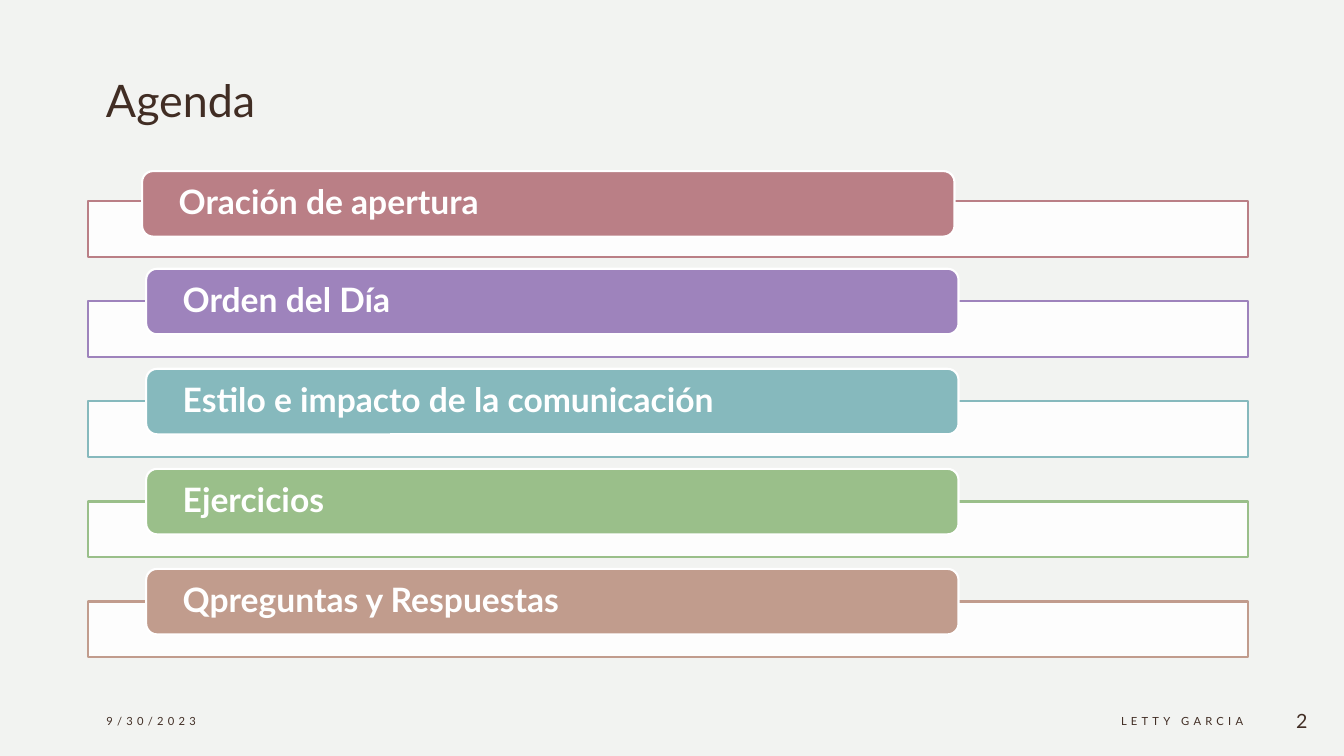
from lxml import etree
from pptx import Presentation
from pptx.dml.color import RGBColor
from pptx.enum import shapes, text
from pptx.oxml import ns
from pptx.util import Pt

WIDTH, HEIGHT = 960, 540
FONT = "Lato"
COLORS = {
    "sage": "A9B5A2", "white": "FFFFFF", "brown": "412D24",
    "rose": "BA7F86", "purple": "9E83BC", "teal": "86B9BD",
    "green": "9ABF8A", "tan": "C19C8D",
}
AGENDA = [
    ("Oración de apertura", "rose"),
    ("Orden del Día", "purple"),
    ("Estilo e impacto de la comunicación", "teal"),
    ("Ejercicios", "green"),
    ("Qpreguntas y Respuestas", "tan"),
]
ROW_PITCH = 71.46
BAND_HEIGHT = 39.6
TAB_WIDTH, TAB_HEIGHT = 580.3, 46.8


def rgb(name):
    return RGBColor.from_string(COLORS[name])


def add_box(slide, kind, box, fill, line=None, opacity=100):
    """Add a preset shape; opacity is the fill's percentage."""
    shape = slide.shapes.add_shape(kind, *map(Pt, box))
    shape.shadow.inherit = False
    shape.fill.solid()
    shape.fill.fore_color.rgb = rgb(fill)
    if opacity < 100:
        color = shape._element.spPr.find(".//" + ns.qn("a:srgbClr"))
        etree.SubElement(color, ns.qn("a:alpha"), val=str(opacity * 1000))
    if line:
        shape.line.color.rgb = rgb(line)
        shape.line.width = Pt(1.5)
    else:
        shape.line.fill.background()
    return shape


def write(shape, words, size, color="brown", bold=False, spacing=0,
          align=text.PP_ALIGN.LEFT):
    """Write one vertically centred line; spacing is in points."""
    frame = shape.text_frame
    frame.word_wrap = True
    frame.vertical_anchor = text.MSO_ANCHOR.MIDDLE
    paragraph = frame.paragraphs[0]
    paragraph.alignment = align
    run = paragraph.add_run()
    run.text = words
    run.font.name = FONT
    run.font.size = Pt(size)
    run.font.bold = bold
    run.font.color.rgb = rgb(color)
    if spacing:
        run.font._element.set("spc", str(spacing * 100))
    return paragraph


def add_label(slide, box, words, size, **style):
    write(slide.shapes.add_textbox(*map(Pt, box)), words, size, **style)


def add_agenda_row(slide, box, words, color, tab_indent, tab_rise):
    """Add a pale band with a coloured tab rising above its top edge."""
    left, top, _, _ = box
    add_box(slide, shapes.MSO_SHAPE.RECTANGLE, box, "white", color, 90)
    tab = add_box(
        slide, shapes.MSO_SHAPE.ROUNDED_RECTANGLE,
        (left + tab_indent, top - tab_rise, TAB_WIDTH, TAB_HEIGHT),
        color, "white")
    frame = tab.text_frame
    frame.margin_left = frame.margin_right = Pt(23.9)
    frame.margin_top = frame.margin_bottom = 0
    paragraph = write(tab, words, 24, "white", bold=True)
    paragraph.line_spacing = 0.9


def add_agenda(slide, left, top, width):
    for index, (words, color) in enumerate(AGENDA):
        # The first tab sits slightly left of and below the others' position.
        indent, rise = (41.8, 23.3) if index else (38.9, 21.6)
        box = (left, top + index * ROW_PITCH, width, BAND_HEIGHT)
        add_agenda_row(slide, box, words, color, indent, rise)


def add_footer(slide, top, height):
    right = text.PP_ALIGN.RIGHT
    add_label(slide, (69, top, 216, height), "9/30/2023", 8, spacing=3)
    add_label(slide, (561.6, top, 338.4, height), "LETTY GARCIA ", 8,
              spacing=3, align=right)
    add_label(slide, (900, top, 41, height), "2", 14, align=right)


def main():
    presentation = Presentation()
    presentation.slide_width, presentation.slide_height = Pt(WIDTH), Pt(HEIGHT)
    slide = presentation.slides.add_slide(presentation.slide_layouts[6])
    add_box(slide, shapes.MSO_SHAPE.RECTANGLE, (0, 0, WIDTH, HEIGHT),
            "sage", opacity=15)
    add_label(slide, (68.6, 46, 823, 49.7), "Agenda", 32)
    add_agenda(slide, 62.6, 143.8, 828.7)
    add_footer(slide, 500.4, 28.8)
    presentation.save("out.pptx")


if __name__ == "__main__":
    main()
